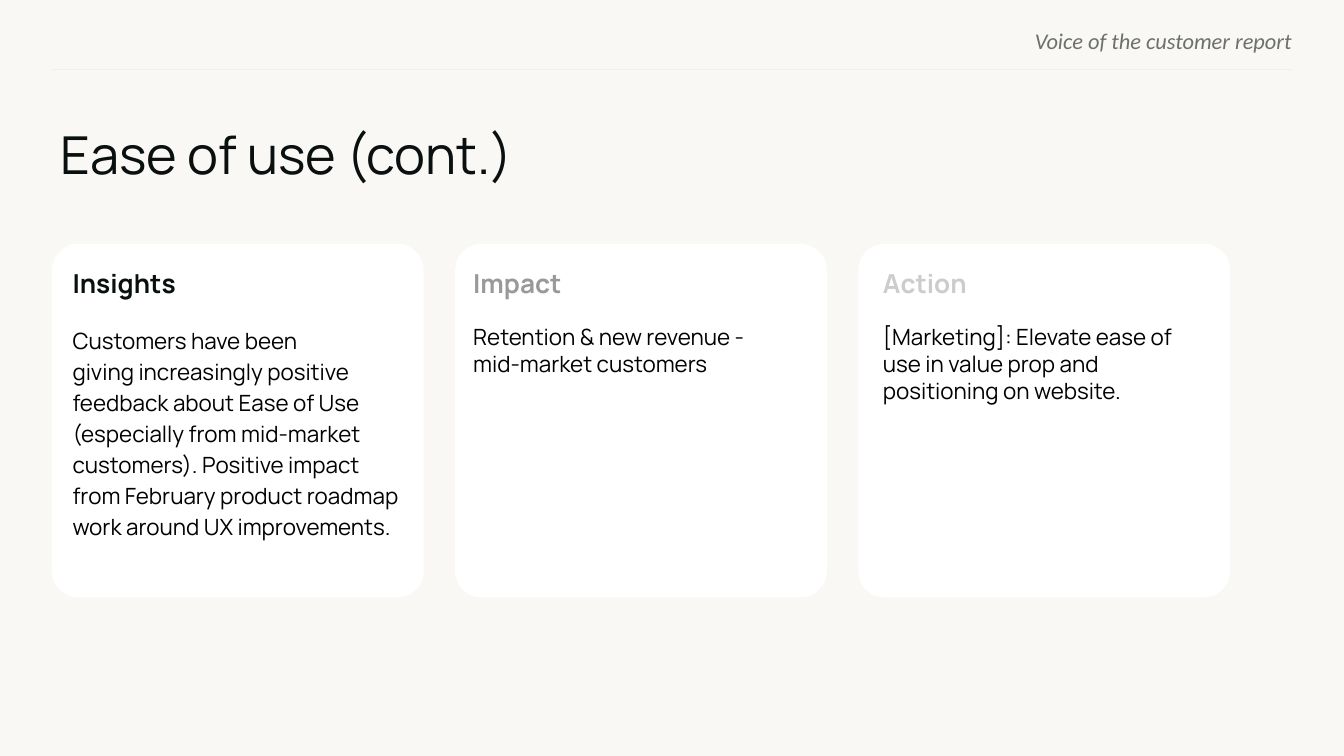
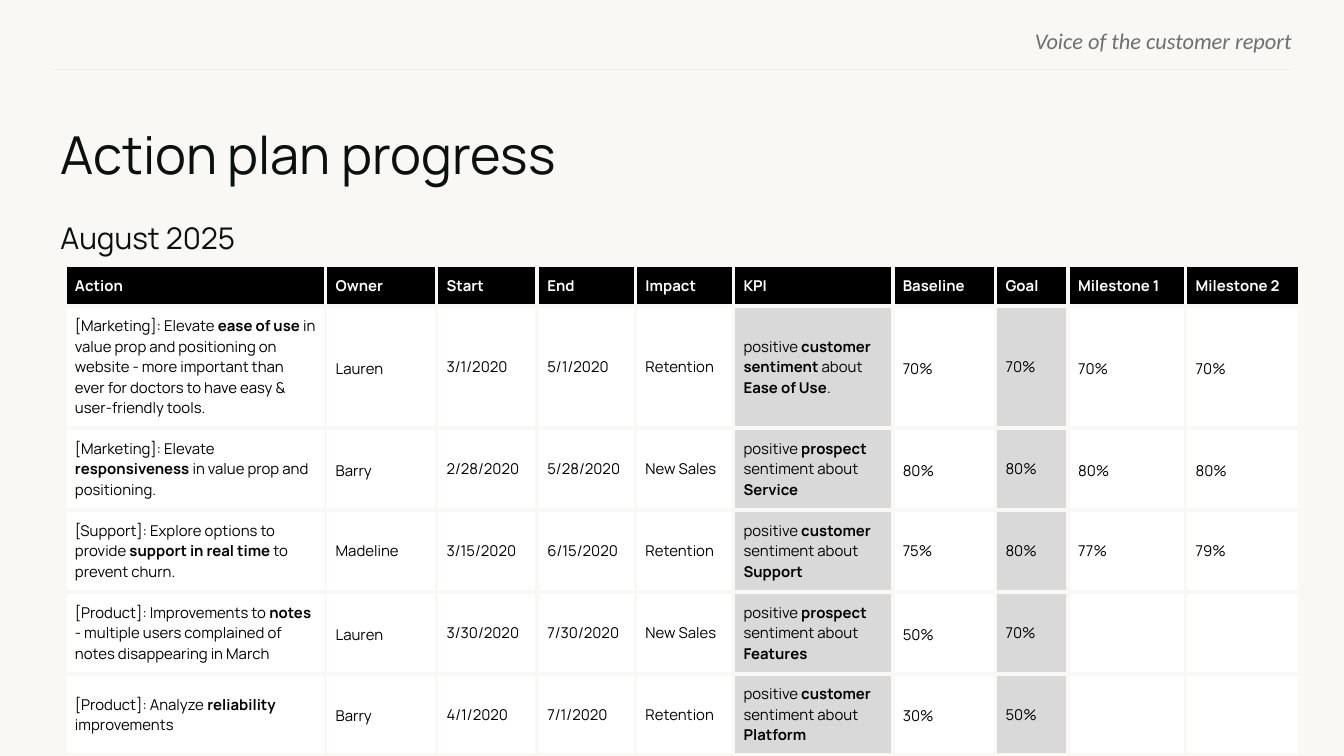
from lxml import etree
from pptx import Presentation
from pptx.dml.color import RGBColor
from pptx.enum.shapes import MSO_CONNECTOR, MSO_SHAPE
from pptx.enum.text import MSO_ANCHOR, PP_ALIGN
from pptx.oxml.ns import qn
from pptx.util import Inches, Pt

LEFT, RIGHT = PP_ALIGN.LEFT, PP_ALIGN.RIGHT
MIDDLE = MSO_ANCHOR.MIDDLE
ROUNDED = MSO_SHAPE.ROUNDED_RECTANGLE
STRAIGHT = MSO_CONNECTOR.STRAIGHT

CREAM = RGBColor(0xF9, 0xF8, 0xF5)
WHITE = RGBColor(0xFF, 0xFF, 0xFF)
BLACK = RGBColor(0x00, 0x00, 0x00)
INK = RGBColor(0x09, 0x10, 0x0F)
SLATE = RGBColor(0x6C, 0x70, 0x6F)
MID_GREY = RGBColor(0x99, 0x99, 0x99)
PALE_GREY = RGBColor(0xCC, 0xCC, 0xCC)
SHADE = RGBColor(0xD9, 0xD9, 0xD9)
RULE = RGBColor(0xEF, 0xEF, 0xEF)

FONT, HEADER_FONT = "Manrope", "Calibri"
GRID_COLUMNS = 100
LOOSE = 1.15
CELL_MARGIN = Pt(5.4)

CARD_LEFT, CARD_PITCH = 3.87, 30
CARDS = [
    ("Insights", INK, 5.4, 25.4, LOOSE,
     "Customers have been \vgiving increasingly positive feedback about Ease of Use "
     "(especially from mid-market customers). Positive impact from February product "
     "roadmap work around UX improvements."),
    ("Impact", MID_GREY, 35.2, 23.8, None,
     "Retention & new revenue - mid-market customers"),
    ("Action", PALE_GREY, 65.7, 23.4, None,
     "[Marketing]: Elevate ease of use in value prop and positioning on website."),
]

PLAN_COLUMNS = [19.4, 8.25, 7.5, 7.3, 7.3, 11.85, 7.65, 5.4, 8.75, 8.5]
PLAN_ROWS = [3, 9.1, 6.1, 6.1, 6.1, 6.05]
SHADED_COLUMNS = {5, 7}
LOOSE_COLUMNS = {1, 6, 8, 9}
TIGHT_ROW = 3
PLAN = [
    ["Action", "Owner", "Start", "End", "Impact", "KPI", "Baseline", "Goal",
     "Milestone 1", "Milestone 2"],
    ["[Marketing]: Elevate **ease of use **in value prop and positioning on website - "
     "more important than ever for doctors to have easy & user-friendly tools.",
     "Lauren", "3/1/2020", "5/1/2020", "Retention",
     "positive** customer sentiment** about** Ease of Use**.", "70%", "70%", "70%", "70%"],
    ["[Marketing]: Elevate **responsiveness** in value prop and positioning.",
     "Barry", "2/28/2020", "5/28/2020", "New Sales",
     "positive **prospect** sentiment about **Service**", "80%", "80%", "80%", "80%"],
    ["[Support]: Explore options to provide **support in real time** to prevent churn.",
     "Madeline", "3/15/2020", "6/15/2020", "Retention",
     "positive **customer** sentiment about** Support**", "75%", "80%", "77%", "79%"],
    ["[Product]: Improvements to **notes** - multiple users complained of notes "
     "disappearing in March",
     "Lauren", "3/30/2020", "7/30/2020", "New Sales",
     "positive **prospect** sentiment about **Features**", "50%", "70%", "", ""],
    ["[Product]: Analyze **reliability** improvements",
     "Barry", "4/1/2020", "7/1/2020", "Retention",
     "positive **customer** sentiment about **Platform**", "30%", "50%", "", ""],
]


class Report:
    def __init__(self):
        self.deck = Presentation()
        self.deck.slide_width = Inches(10)
        self.deck.slide_height = self.deck.slide_width * 9 // 16
        self.unit = self.deck.slide_width / GRID_COLUMNS
        self.page = None

    def grid(self, *units):
        return [round(value * self.unit) for value in units]

    def style(self, para, size, color, bold=False, italic=False, font=FONT, spacing=None):
        para.font.name = font
        para.font.size = Pt(size)
        para.font.bold = bold
        para.font.italic = italic
        para.font.color.rgb = color
        if spacing:
            para.line_spacing = spacing

    def new_page(self, title):
        self.page = self.deck.slides.add_slide(self.deck.slide_layouts[6])
        self.page.background.fill.solid()
        self.page.background.fill.fore_color.rgb = CREAM
        self.text("Voice of the customer report", 57.6, 2, 38.53, 1.8, 12, SLATE,
                  align=RIGHT, italic=True, font=HEADER_FONT)
        self.line(96.13, 5.17, 3.87, 5.17)
        self.text(title, 4.5, 9.1, 92.3, 5.1, 28, INK)

    def text(self, words, left, top, width, height, size, color,
             align=LEFT, inset=0, **style):
        box = self.page.shapes.add_textbox(*self.grid(left, top, width, height))
        frame = box.text_frame
        frame.word_wrap = True
        frame.margin_left = frame.margin_top = 0
        frame.margin_right = frame.margin_bottom = Inches(inset)
        para = frame.paragraphs[0]
        para.text = words
        para.alignment = align
        self.style(para, size, color, **style)

    def line(self, *ends):
        rule = self.page.shapes.add_connector(STRAIGHT, *self.grid(*ends))
        rule.line.color.rgb = RULE
        rule.line.width = Pt(0.75)
        etree.SubElement(rule._element.spPr, qn("a:effectLst"))

    def card(self, left, heading, color, text_left, text_width, spacing, body):
        panel = self.page.shapes.add_shape(ROUNDED, *self.grid(left, 18.15, 27.65, 26.3))
        panel.adjustments[0] = 0.074
        panel.shadow.inherit = False
        panel.fill.solid()
        panel.fill.fore_color.rgb = WHITE
        panel.line.fill.background()
        self.text(heading, text_left, 19.9, text_width, 3.3, 14, color, bold=True)
        self.text(body, text_left, 24.07, text_width, 18.7, 12, BLACK,
                  inset=0.1, spacing=spacing)

    def table(self, left, top, columns, rows, content):
        frame = self.page.shapes.add_table(
            len(rows), len(columns), *self.grid(left, top, sum(columns), sum(rows)))
        table = frame.table
        table.first_row = table.horz_banding = False
        for column, width in zip(table.columns, self.grid(*columns)):
            column.width = width
        for row, height in zip(table.rows, self.grid(*rows)):
            row.height = height
        for r, entries in enumerate(content):
            for c, words in enumerate(entries):
                if r == 0:
                    fill = BLACK
                else:
                    fill = SHADE if c in SHADED_COLUMNS else WHITE
                loose = r not in (0, TIGHT_ROW) and c in LOOSE_COLUMNS
                self.cell(table.cell(r, c), words, fill, r == 0, LOOSE if loose else None)

    def cell(self, cell, words, fill, header, spacing):
        cell.vertical_anchor = MIDDLE
        cell.margin_left = cell.margin_right = CELL_MARGIN
        cell.margin_top = cell.margin_bottom = CELL_MARGIN
        cell.fill.solid()
        cell.fill.fore_color.rgb = fill
        para = cell.text_frame.paragraphs[0]
        self.style(para, 8, WHITE if header else BLACK, bold=header, spacing=spacing)
        for index, part in enumerate(words.split("**")):
            if part:
                span = para.add_run()
                span.text = part
                if index % 2:
                    span.font.bold = True
        properties = cell._tc.get_or_add_tcPr()
        for index, side in enumerate("LRTB"):
            border = etree.Element(qn(f"a:ln{side}"), w=str(Pt(2.25)))
            solid = etree.SubElement(border, qn("a:solidFill"))
            etree.SubElement(solid, qn("a:srgbClr"), val=str(CREAM))
            properties.insert(index, border)


def main():
    report = Report()

    report.new_page("Ease of use (cont.)")
    for index, card in enumerate(CARDS):
        report.card(CARD_LEFT + index * CARD_PITCH, *card)

    report.new_page("Action plan progress")
    report.text("August 2025", 4.5, 15.95, 55.4, 2.5, 16, INK, spacing=LOOSE)
    report.table(4.83, 19.75, PLAN_COLUMNS, PLAN_ROWS, PLAN)

    report.deck.save("out.pptx")


if __name__ == "__main__":
    main()
